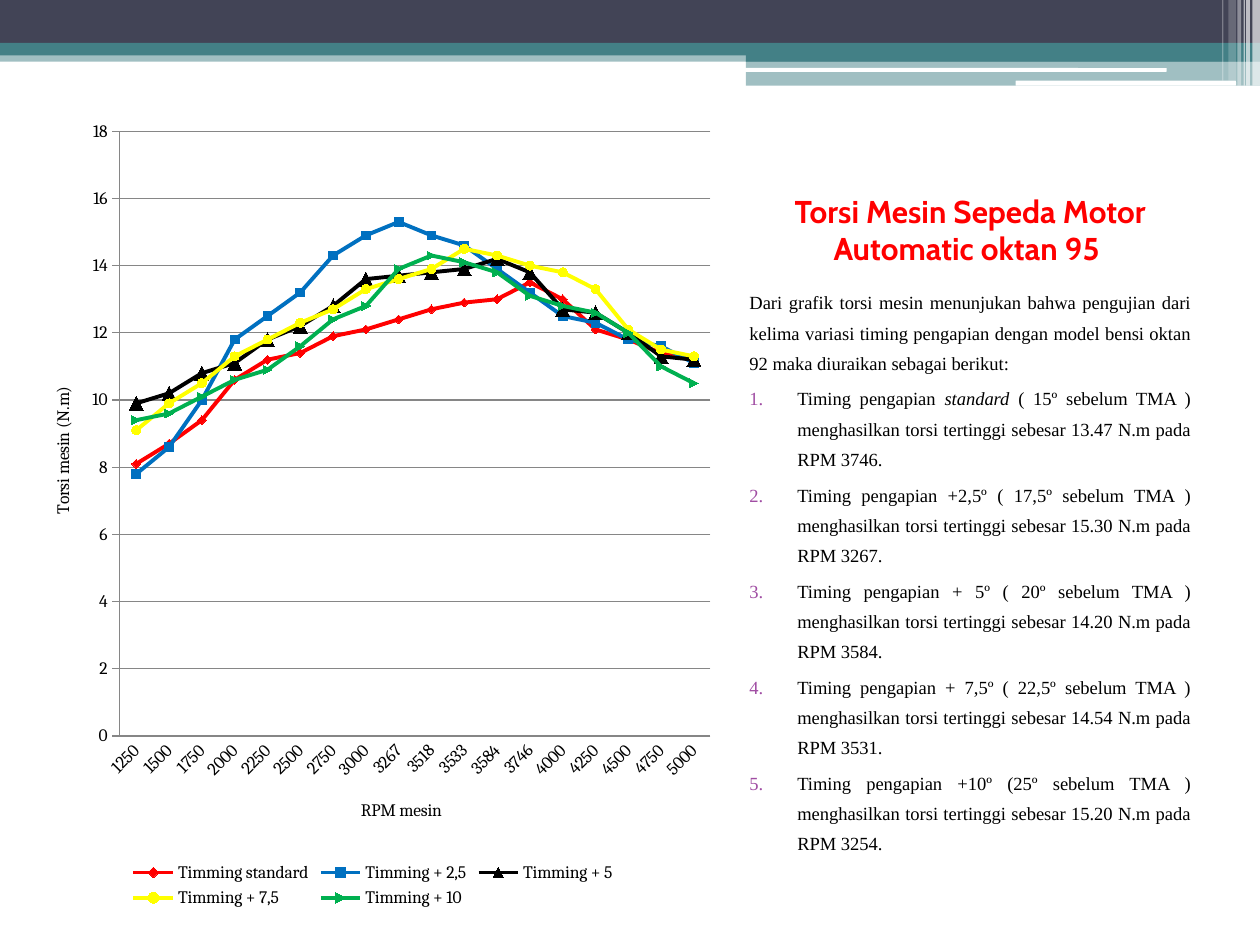
from lxml import etree
from pptx import Presentation
from pptx.chart.data import CategoryChartData
from pptx.dml.color import RGBColor
from pptx.enum.chart import (XL_CHART_TYPE, XL_LEGEND_POSITION, XL_MARKER_STYLE,
                             XL_TICK_MARK)
from pptx.enum.shapes import MSO_SHAPE
from pptx.enum.text import MSO_ANCHOR, PP_ALIGN
from pptx.oxml import parse_xml
from pptx.oxml.ns import nsdecls, qn
from pptx.util import Inches, Pt

RECT, ROUND = MSO_SHAPE.RECTANGLE, MSO_SHAPE.ROUNDED_RECTANGLE
LINE = XL_CHART_TYPE.LINE_MARKERS
BOTTOM = XL_LEGEND_POSITION.BOTTOM
NO_TICK, OUT_TICK = XL_TICK_MARK.NONE, XL_TICK_MARK.OUTSIDE
DIAMOND, SQUARE = XL_MARKER_STYLE.DIAMOND, XL_MARKER_STYLE.SQUARE
TRIANGLE, CIRCLE = XL_MARKER_STYLE.TRIANGLE, XL_MARKER_STYLE.CIRCLE
AUTO = XL_MARKER_STYLE.AUTOMATIC
CENTER, JUSTIFY = PP_ALIGN.CENTER, PP_ALIGN.JUSTIFY
TOP, BASE = MSO_ANCHOR.TOP, MSO_ANCHOR.BOTTOM

WHITE = RGBColor(0xFF, 0xFF, 0xFF)
BLACK = RGBColor(0, 0, 0)
NAVY = RGBColor(0x42, 0x44, 0x56)
TEAL = RGBColor(0x43, 0x80, 0x86)
GRAY = RGBColor(0x86, 0x86, 0x86)
PURPLE = RGBColor(0xA0, 0x4D, 0xA3)
RED = RGBColor(0xFF, 0, 0)
BLUE = RGBColor(0, 0x70, 0xC0)
YELLOW = RGBColor(0xFF, 0xFF, 0)
GREEN = RGBColor(0, 0xB0, 0x50)

# left, top, width, height, colour, opacity in percent
BANDS = [
    (0, 0.4, 10, 0.09, TEAL, 50),
    (0, 0, 10, 0.34, NAVY, 100),
    (0, 0.34, 10, 0.1, TEAL, 100),
    (5.92, 0.39, 4.08, 0.1, TEAL, 100),
    (5.92, 0.48, 4.08, 0.2, TEAL, 50),
]
BARS = [(5.91, 0.54, 3.35, 0.03, WHITE, 100), (8.06, 0.64, 1.75, 0.04, WHITE, 100)]
# left, width, height, opacity
STRIPES = [
    (9.94, 0.06, 0.68, 65), (9.89, 0.03, 0.68, 65), (9.87, 0.01, 0.68, 60),
    (9.82, 0.03, 0.68, 40), (9.75, 0.06, 0.64, 20), (9.7, 0.01, 0.64, 30),
]

SPEEDS = [1250, 1500, 1750, 2000, 2250, 2500, 2750, 3000, 3267, 3518, 3533,
          3584, 3746, 4000, 4250, 4500, 4750, 5000]
SERIES = [
    ("Timming standard", RED, DIAMOND, 5,
     [8.1, 8.7, 9.4, 10.6, 11.2, 11.4, 11.9, 12.1, 12.4, 12.7, 12.9, 13, 13.5,
      13, 12.1, 11.8, 11.4, 11.2]),
    ("Timming + 2,5", BLUE, SQUARE, 5,
     [7.8, 8.6, 10, 11.8, 12.5, 13.2, 14.3, 14.9, 15.3, 14.9, 14.6, 13.9, 13.2,
      12.5, 12.3, 11.8, 11.6, 11.1]),
    ("Timming + 5", BLACK, TRIANGLE, 8,
     [9.9, 10.2, 10.8, 11.1, 11.8, 12.2, 12.8, 13.6, 13.7, 13.8, 13.9, 14.2,
      13.8, 12.7, 12.6, 12, 11.3, 11.2]),
    ("Timming + 7,5", YELLOW, CIRCLE, 5,
     [9.1, 9.9, 10.5, 11.3, 11.8, 12.3, 12.7, 13.3, 13.6, 13.9, 14.5, 14.3, 14,
      13.8, 13.3, 12.1, 11.5, 11.3]),
    ("Timming + 10", GREEN, AUTO, 5,
     [9.4, 9.6, 10.1, 10.6, 10.9, 11.6, 12.4, 12.8, 13.9, 14.3, 14.1, 13.8,
      13.1, 12.8, 12.6, 12, 11, 10.5]),
]

TITLE = "Torsi Mesin Sepeda Motor Automatic oktan 95 "
INTRO = ("Dari grafik torsi mesin menunjukan bahwa pengujian dari kelima variasi "
         "timing pengapian dengan model bensi oktan 92 maka diuraikan sebagai berikut:")
# setting, whether it is italic, angle, peak torque, speed at the peak
PEAKS = [
    ("standard", True, " ( 15º", "13.47", 3746),
    ("+2,5º", False, " ( 17,5º", "15.30", 3267),
    ("+ 5º", False, " ( 20º", "14.20", 3584),
    ("+ 7,5º", False, " ( 22,5º", "14.54", 3531),
    ("+10º", False, " (25º", "15.20", 3254),
]


def style(font, face="Times New Roman", size=10.6, color=BLACK, bold=False, italic=False):
    font.name, font.size = face, Pt(size)
    font.bold, font.italic = bold, italic
    font.color.rgb = color


def write(para, text, **form):
    run = para.add_run()
    run.text = text
    style(run.font, **form)


def add_frame(slide, box, anchor=TOP):
    frame = slide.shapes.add_textbox(*map(Inches, box)).text_frame
    frame.word_wrap = True
    frame.vertical_anchor = anchor
    return frame


def add_block(slide, kind, left, top, width, height, color, alpha):
    block = slide.shapes.add_shape(kind, *map(Inches, (left, top, width, height)))
    block.shadow.inherit = False
    block.line.fill.background()
    block.fill.solid()
    block.fill.fore_color.rgb = color
    if alpha < 100:
        tone = block.fill._xPr.find(".//" + qn("a:srgbClr"))
        etree.SubElement(tone, qn("a:alpha"), val=str(alpha * 1000))


def add_header(slide):
    for band in BANDS:
        add_block(slide, RECT, *band)
    for bar in BARS:
        add_block(slide, ROUND, *bar)
    for left, width, height, alpha in STRIPES:
        add_block(slide, RECT, left, 0, width, height, WHITE, alpha)


def add_title(slide, box):
    para = add_frame(slide, box, BASE).paragraphs[0]
    para.alignment = CENTER
    write(para, TITLE, face="Cabin", size=18, color=RED, bold=True)


def set_number(para):
    """Give the paragraph a hanging, coloured automatic number."""
    props = para._p.get_or_add_pPr()
    props.set("marL", str(Inches(0.38)))
    props.set("indent", str(Inches(-0.38)))
    tint = etree.SubElement(props, qn("a:buClr"))
    etree.SubElement(tint, qn("a:srgbClr"), val=str(PURPLE))
    etree.SubElement(props, qn("a:buAutoNum"), type="arabicPeriod")


def add_notes(slide, box):
    frame = add_frame(slide, box)
    write(frame.paragraphs[0], INTRO)
    for name, slant, angle, torque, speed in PEAKS:
        para = frame.add_paragraph()
        write(para, "Timing pengapian ")
        write(para, name, italic=slant)
        write(para, f"{angle} sebelum TMA ) menghasilkan torsi tertinggi "
                    f"sebesar {torque} N.m pada RPM {speed}.")
    for para in frame.paragraphs:
        para.alignment = JUSTIFY
        para.line_spacing, para.space_before = 1.36, Pt(3)
    for para in frame.paragraphs[1:]:
        set_number(para)


def set_layout(part, before, left, top, width, height, inner=False):
    """Place a chart part, in fractions of the chart, after the named child."""
    old = part.find(qn("c:layout"))
    if old is not None:
        part.remove(old)
    target = '<c:layoutTarget val="inner"/>' if inner else ""
    sizes = "".join(f'<c:{tag} val="{val}"/>' for tag, val in
                    zip("xywh", (left, top, width, height)))
    layout = parse_xml(f'<c:layout {nsdecls("c")}><c:manualLayout>{target}'
                       '<c:xMode val="edge"/><c:yMode val="edge"/>'
                       f'{sizes}</c:manualLayout></c:layout>')
    if before:
        part.find(qn(before)).addnext(layout)
    else:
        part.insert(0, layout)


def set_axis(axis, title, tick):
    write(axis.axis_title.text_frame.paragraphs[0], title, face="Cambria", size=10)
    axis.major_tick_mark, axis.minor_tick_mark = tick, NO_TICK
    style(axis.tick_labels.font, face="Cambria", size=10)
    axis.format.line.color.rgb = GRAY


def add_graph(slide, box):
    data = CategoryChartData()
    data.categories = [str(speed) for speed in SPEEDS]
    for name, *_, vals in SERIES:
        data.add_series(name, vals)
    chart = slide.shapes.add_chart(LINE, *map(Inches, box), data).chart
    style(chart.font, face="Cambria", size=10)
    chart.has_title = False
    chart.has_legend = True
    chart.legend.position = BOTTOM
    chart.legend.include_in_layout = False
    set_axis(chart.category_axis, "RPM mesin", NO_TICK)
    labels = chart.category_axis.tick_labels.font._element.getparent().getparent()
    labels.getparent().find(qn("a:bodyPr")).set("rot", "-2700000")
    axis = chart.value_axis
    set_axis(axis, "Torsi mesin (N.m)", OUT_TICK)
    axis.minimum_scale, axis.maximum_scale, axis.major_unit = 0, 18, 2
    axis.major_gridlines.format.line.color.rgb = GRAY
    plot = chart.plots[0]
    plot.vary_by_categories = False
    for line, (_, color, mark, size, _) in zip(plot.series, SERIES):
        line.smooth = False
        line.format.line.color.rgb = color
        line.format.line.width = Pt(2.25)
        line.marker.style, line.marker.size = mark, size
        for part in (line.marker.format.fill, line.marker.format.line.fill):
            part.solid()
            part.fore_color.rgb = color
    root = chart._chartSpace
    set_layout(root.find(".//" + qn("c:plotArea")), None, 0.14, 0.03, 0.84, 0.75, True)
    set_layout(root.find(".//" + qn("c:legend")), "c:legendPos", 0.15, 0.93, 0.7, 0.07)


def main():
    deck = Presentation()
    deck.slide_width, deck.slide_height = Inches(10), Inches(7.5)
    slide = deck.slides.add_slide(deck.slide_layouts[6])
    add_header(slide)
    add_title(slide, (5.85, 1.21, 3.7, 0.96))
    add_notes(slide, (5.85, 2.2, 3.7, 5.05))
    add_graph(slide, (0.17, 0.85, 5.58, 6.4))
    deck.save("out.pptx")


if __name__ == "__main__":
    main()
